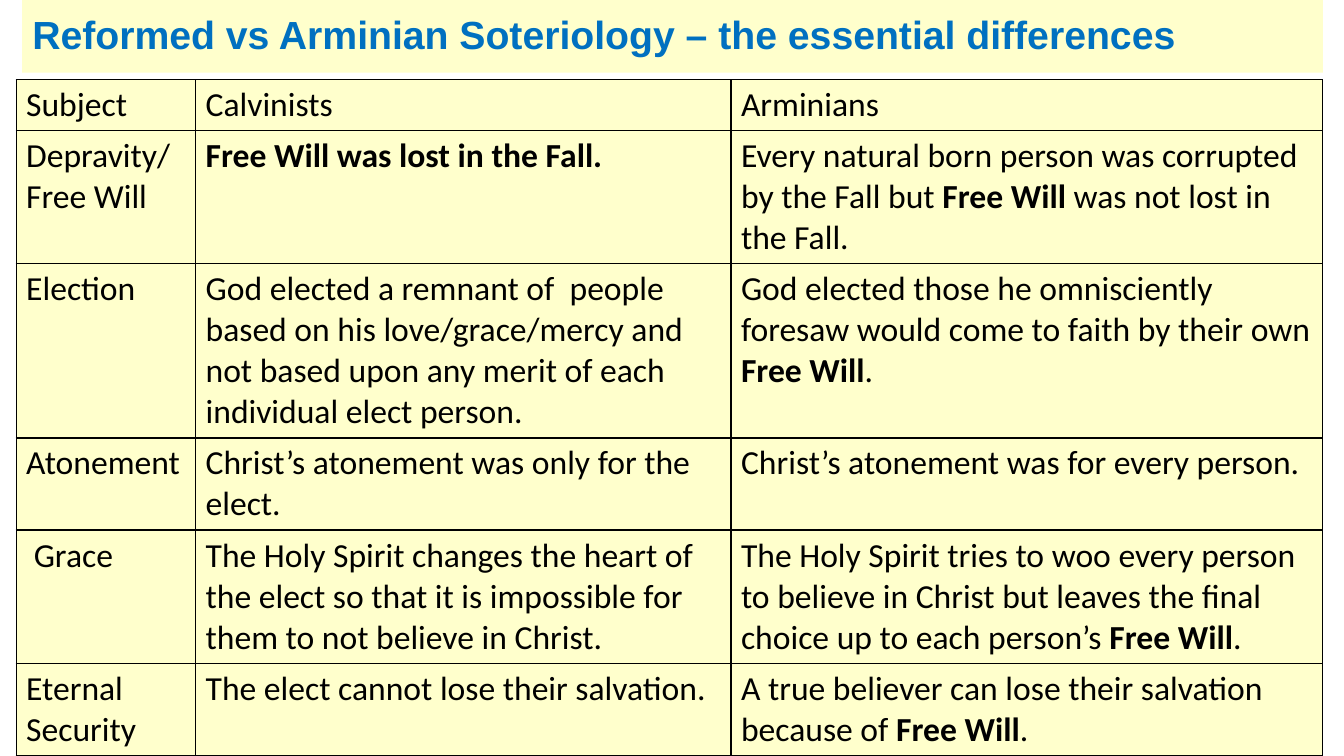
from dataclasses import dataclass

from lxml import etree
from pptx import Presentation
from pptx.dml.color import RGBColor
from pptx.enum.text import MSO_ANCHOR, MSO_AUTO_SIZE, PP_ALIGN
from pptx.oxml.ns import qn
from pptx.util import Inches, Pt

MIDDLE = MSO_ANCHOR.MIDDLE
NO_AUTOFIT = MSO_AUTO_SIZE.NONE
LEFT = PP_ALIGN.LEFT
TITLE_ONLY_LAYOUT = 5
BOLD_MARK = "**"


@dataclass(frozen=True)
class Theme:
    """Colours, fonts and type sizes of the slide."""
    panel: RGBColor = RGBColor(0xFF, 0xFF, 0xCC)
    heading: RGBColor = RGBColor(0x00, 0x70, 0xC0)
    text: RGBColor = RGBColor(0x00, 0x00, 0x00)
    border: str = "000000"
    heading_font: str = "Arial"
    body_font: str = "Calibri"
    heading_size: Pt = Pt(28)
    body_size: Pt = Pt(24)
    border_width: Pt = Pt(1)


THEME = Theme()
TITLE = "Reformed vs Arminian Soteriology – the essential differences"
COLUMN_WIDTHS = (1.78, 5.31, 5.87)
ROW_HEIGHT = 0.41
DOCTRINES = (
    ("Subject", "Calvinists", "Arminians"),
    ("Depravity/\nFree Will",
     "**Free Will was lost in the Fall.**",
     "Every natural born person was corrupted by the Fall but "
     "**Free Will **was not lost in the Fall."),
    ("Election",
     "God elected a remnant of  people based on his love/grace/mercy and "
     "not based upon any merit of each individual elect person.",
     "God elected those he omnisciently foresaw would come to faith by "
     "their own **Free Will**."),
    ("Atonement",
     "Christ’s atonement was only for the elect.",
     "Christ’s atonement was for every person."),
    (" Grace",
     "The Holy Spirit changes the heart of the elect so that it is "
     "impossible for them to not believe in Christ.",
     "The Holy Spirit tries to woo every person to believe in Christ but "
     "leaves the final choice up to each person’s **Free Will**."),
    ("Eternal\nSecurity",
     "The elect cannot lose their salvation.",
     "A true believer can lose their salvation because of **Free Will**."),
)


def style_font(font, name, size, color, bold):
    """Apply a typeface, size, colour and weight to a font."""
    font.name = name
    font.size = size
    font.color.rgb = color
    font.bold = bold


def add_title(slide):
    """Fill and format the title placeholder."""
    title = slide.shapes.title
    title.left, title.top = Inches(0.22), Inches(0)
    title.width, title.height = Inches(12.9), Inches(0.72)
    title.fill.solid()
    title.fill.fore_color.rgb = THEME.panel
    frame = title.text_frame
    frame.text = TITLE
    frame.word_wrap = True
    frame.auto_size = NO_AUTOFIT
    frame.vertical_anchor = MIDDLE
    paragraph = frame.paragraphs[0]
    paragraph.alignment = LEFT
    paragraph.line_spacing = 0.9
    style_font(paragraph.runs[0].font, THEME.heading_font,
               THEME.heading_size, THEME.heading, True)


def add_borders(cell):
    """Draw a thin line on all four sides of a cell."""
    properties = cell._tc.get_or_add_tcPr()
    for index, side in enumerate(("lnL", "lnR", "lnT", "lnB")):
        line = etree.Element(qn(f"a:{side}"), w=str(THEME.border_width))
        fill = etree.SubElement(line, qn("a:solidFill"))
        etree.SubElement(fill, qn("a:srgbClr"), val=THEME.border)
        properties.insert(index, line)


def fill_cell(cell, text):
    """Write marked text into a cell and format it."""
    cell.fill.solid()
    cell.fill.fore_color.rgb = THEME.panel
    add_borders(cell)
    cell.text_frame.text = text.replace(BOLD_MARK, "")
    for paragraph, line in zip(cell.text_frame.paragraphs, text.split("\n")):
        paragraph.text = ""
        for index, part in enumerate(line.split(BOLD_MARK)):
            if part:
                run = paragraph.add_run()
                run.text = part
                style_font(run.font, THEME.body_font, THEME.body_size,
                           THEME.text, index % 2 == 1)


def add_comparison_table(slide):
    """Add the table of doctrines, whose rows grow with their text."""
    graphic_frame = slide.shapes.add_table(
        len(DOCTRINES), len(COLUMN_WIDTHS), Inches(0.16), Inches(0.79),
        Inches(sum(COLUMN_WIDTHS)), Inches(ROW_HEIGHT * len(DOCTRINES)))
    table = graphic_frame.table
    table.first_row = False
    table.horz_banding = False
    for column, width in zip(table.columns, COLUMN_WIDTHS):
        column.width = Inches(width)
    for row, texts in zip(table.rows, DOCTRINES):
        for cell, text in zip(row.cells, texts):
            fill_cell(cell, text)
    graphic_frame.height = Inches(6.6)


def main():
    """Build and save the presentation."""
    presentation = Presentation()
    presentation.slide_width = Inches(13.33)
    presentation.slide_height = Inches(7.5)
    layout = presentation.slide_layouts[TITLE_ONLY_LAYOUT]
    slide = presentation.slides.add_slide(layout)
    add_title(slide)
    add_comparison_table(slide)
    presentation.save("out.pptx")


if __name__ == "__main__":
    main()
